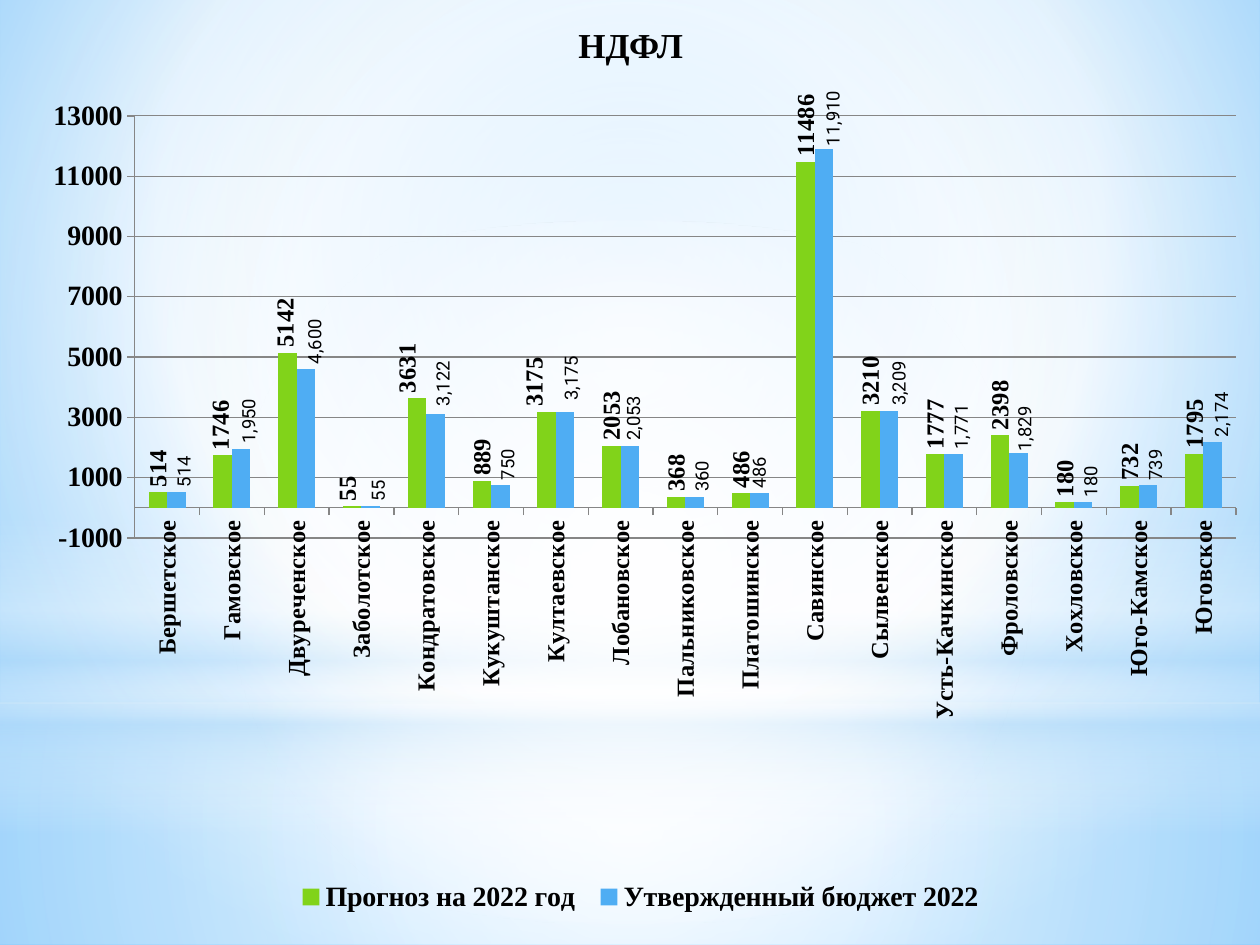
import copy
import pptx
import pptx.util
import pptx.chart.data
import pptx.dml.color
import pptx.enum.chart
import pptx.enum.shapes
import pptx.enum.text
import pptx.oxml
import pptx.oxml.ns

Inches, Pt = pptx.util.Inches, pptx.util.Pt
qn = pptx.oxml.ns.qn
SHAPE = pptx.enum.shapes.MSO_SHAPE
SERIF, SANS = "Times New Roman", "Roboto"
COLORS = {"text": "000000", "grid": "868686", "white": "FFFFFF", "pale": "B4DCFA",
          "sky": "9ED5FF", "blue": "5BB9FF", "forecast": "81D31A", "budget": "4FADF3"}
CENTER = (50, 50, 50, 50)

# Settlement, forecast, approved budget
ROWS = [
    ("Бершетское", 514, 514), ("Гамовское", 1746, 1950), ("Двуреченское", 5142, 4600),
    ("Заболотское", 55, 55), ("Кондратовское", 3631, 3122), ("Кукуштанское", 889, 750),
    ("Култаевское", 3175, 3175), ("Лобановское", 2053, 2053), ("Пальниковское", 368, 360),
    ("Платошинское", 486, 486), ("Савинское", 11486, 11910), ("Сылвенское", 3210, 3209),
    ("Усть-Качкинское", 1777, 1771), ("Фроловское", 2398, 1829), ("Хохловское", 180, 180),
    ("Юго-Камское", 732, 739), ("Юговское", 1795, 2174),
]

# Label shifts in inches by row: most budget labels move right of their column
FORECAST_SHIFTS = {1: (-0.02, 0), 2: (-0.02, 0), 3: (-0.04, 0), 4: (-0.08, 0), 6: (-0.1, 0)}
BUDGET_SHIFTS = {i: (0.06, 0) for i in range(len(ROWS)) if i != 9}
BUDGET_SHIFTS.update({2: (0.07, 0), 4: (0.06, -0.02), 6: (0.05, -0.05), 7: (0.03, 0),
                      10: (0.07, 0.02), 11: (0.08, 0), 13: (0.05, 0.03), 16: (0.07, 0)})


class SlideBuilder:
    def __init__(self, prs):
        self.s = prs.slides.add_slide(prs.slide_layouts[6])

    def rgb(self, name):
        return pptx.dml.color.RGBColor.from_string(COLORS[name])

    def font(self, font, size, bold=True, name=SERIF):
        font.name, font.size, font.bold = name, Pt(size), bold
        font.color.rgb = self.rgb("text")

    def gradient(self, fill, parent, stops, focus=None):
        """Stops are (position, colour, opacity); no focus means top to bottom."""
        fill.solid()
        gs = "".join(
            f'<a:gs pos="{pos * 1000}"><a:srgbClr val="{COLORS[color]}">'
            f'<a:alpha val="{alpha * 1000}"/></a:srgbClr></a:gs>'
            for pos, color, alpha in stops)
        if focus:
            sides = " ".join(f'{k}="{v * 1000}"' for k, v in zip("ltrb", focus))
            kind = f'<a:path path="circle"><a:fillToRect {sides}/></a:path>'
        else:
            kind = '<a:lin ang="5400000" scaled="0"/>'
        grad = pptx.oxml.parse_xml(
            f'<a:gradFill {pptx.oxml.ns.nsdecls("a")} rotWithShape="1">'
            f'<a:gsLst>{gs}</a:gsLst>{kind}</a:gradFill>')
        parent.replace(parent.find(qn("a:solidFill")), grad)

    def background(self, stops, focus):
        fill = self.s.background.fill
        fill.solid()
        bg_pr = self.s.element.find(".//" + qn("p:bgPr"))
        self.gradient(fill, bg_pr, stops, focus)

    def glow(self, kind, top, height, stops, focus=None):
        sp = self.s.shapes.add_shape(kind, 0, Inches(top), Inches(10), Inches(height))
        sp.shadow.inherit = False
        sp.line.fill.background()
        self.gradient(sp.fill, sp.element.spPr, stops, focus)

    def title(self, text, x, y, w, h):
        sp = self.s.shapes.add_textbox(Inches(x), Inches(y), Inches(w), Inches(h))
        tf = sp.text_frame
        tf.word_wrap = True
        tf.vertical_anchor = pptx.enum.text.MSO_ANCHOR.MIDDLE
        p = tf.paragraphs[0]
        p.alignment = pptx.enum.text.PP_ALIGN.CENTER
        r = p.add_run()
        r.text = text
        self.font(r.font, 20)

    def turn_up(self, element):
        body = element.find(qn("c:txPr")).find(qn("a:bodyPr"))
        body.set("rot", "-5400000")
        body.set("vert", "horz")

    def line(self, fmt):
        fmt.line.color.rgb = self.rgb("grid")
        fmt.line.width = Pt(0.75)

    def axis(self, axis, size):
        self.font(axis.tick_labels.font, size)
        axis.major_tick_mark = pptx.enum.chart.XL_TICK_MARK.OUTSIDE
        self.line(axis.format)

    def layout(self, modes, values):
        sizes = "".join(f'<c:{k} val="{v}"/>' for k, v in zip("xywh", values))
        return pptx.oxml.parse_xml(
            f'<c:layout {pptx.oxml.ns.nsdecls("c")}><c:manualLayout>'
            f'{modes}{sizes}</c:manualLayout></c:layout>')

    def series(self, series, color, size, bold, name, number_format, shifts, chart_size):
        series.format.fill.solid()
        series.format.fill.fore_color.rgb = self.rgb(color)
        series.invert_if_negative = False
        labels = series.data_labels
        labels.show_value = True
        labels.number_format = number_format
        labels.number_format_is_linked = False
        labels.position = pptx.enum.chart.XL_LABEL_POSITION.OUTSIDE_END
        self.font(labels.font, size, bold, name)
        self.turn_up(labels._element)

        # Shifted labels repeat the series label style
        w, h = chart_size
        style = [e for e in labels._element if e.tag != qn("c:showLeaderLines")]
        for n, (i, (dx, dy)) in enumerate(sorted(shifts.items())):
            label = pptx.oxml.parse_xml(
                f'<c:dLbl {pptx.oxml.ns.nsdecls("c")}><c:idx val="{i}"/></c:dLbl>')
            label.append(self.layout("", (dx / w, dy / h)))
            label.extend(copy.deepcopy(style))
            labels._element.insert(n, label)

    def column_chart(self, x, y, w, h, plot_box):
        cats, forecast, budget = zip(*ROWS)
        data = pptx.chart.data.CategoryChartData()
        data.categories = cats
        data.add_series("Прогноз на 2022 год ", forecast)
        data.add_series("Утвержденный бюджет 2022", budget)
        chart = self.s.shapes.add_chart(
            pptx.enum.chart.XL_CHART_TYPE.COLUMN_CLUSTERED,
            Inches(x), Inches(y), Inches(w), Inches(h), data).chart
        self.font(chart.font, 18, False, SANS)
        chart.has_title = False

        # Axes
        self.axis(chart.category_axis, 14)
        self.turn_up(chart.category_axis._element)
        val = chart.value_axis
        self.axis(val, 16)
        val.minimum_scale, val.maximum_scale, val.major_unit = -1000, 13000, 2000
        val.tick_labels.number_format = "0"
        val.tick_labels.number_format_is_linked = False
        val.has_major_gridlines = True
        self.line(val.major_gridlines.format)

        # Columns
        plot = chart.plots[0]
        plot.vary_by_categories = False
        plot.gap_width, plot.overlap = 150, 0
        self.series(plot.series[0], "forecast", 14, True, SERIF, "0", FORECAST_SHIFTS, (w, h))
        self.series(plot.series[1], "budget", 10.5, False, SANS, "#,##0", BUDGET_SHIFTS, (w, h))

        # Legend
        chart.has_legend = True
        chart.legend.position = pptx.enum.chart.XL_LEGEND_POSITION.BOTTOM
        chart.legend.include_in_layout = False
        self.font(chart.legend.font, 16)

        # Fixed inner plot area, given in inches within the chart
        modes = '<c:layoutTarget val="inner"/><c:xMode val="edge"/><c:yMode val="edge"/>'
        area = chart._chartSpace.find(".//" + qn("c:plotArea"))
        old = area.find(qn("c:layout"))
        if old is not None:
            area.remove(old)
        area.insert(0, self.layout(modes, [v / t for v, t in zip(plot_box, (w, h, w, h))]))


def main():
    prs = pptx.Presentation()
    prs.slide_width, prs.slide_height = Inches(10), Inches(7.5)
    b = SlideBuilder(prs)

    # Backdrop of soft gradients
    b.background([(0, "sky", 100), (60, "white", 100), (100, "blue", 100)], (20, 10, 20, 60))
    b.glow(SHAPE.RECTANGLE, 5.58, 1.92,
           [(0, "white", 91), (37, "white", 76), (100, "pale", 79)], CENTER)
    b.glow(SHAPE.RECTANGLE, 0, 5.58,
           [(0, "white", 89), (48, "white", 62), (100, "pale", 79)], CENTER)
    b.glow(SHAPE.RECTANGLE, 4.12, 2.5,
           [(0, "white", 0), (29, "white", 30), (45, "pale", 40),
            (55, "white", 26), (65, "pale", 60), (100, "white", 0)])
    b.glow(SHAPE.OVAL, 1.75, 5.58, [(0, "white", 100), (56, "white", 0)], CENTER)

    # Chart and title
    b.column_chart(0.28, 0.68, 9.61, 6.61, (0.79, 0.24, 8.74, 3.35))
    b.title("НДФЛ", 0.2, 0.1, 9.61, 0.5)
    prs.save("out.pptx")


if __name__ == "__main__":
    main()
